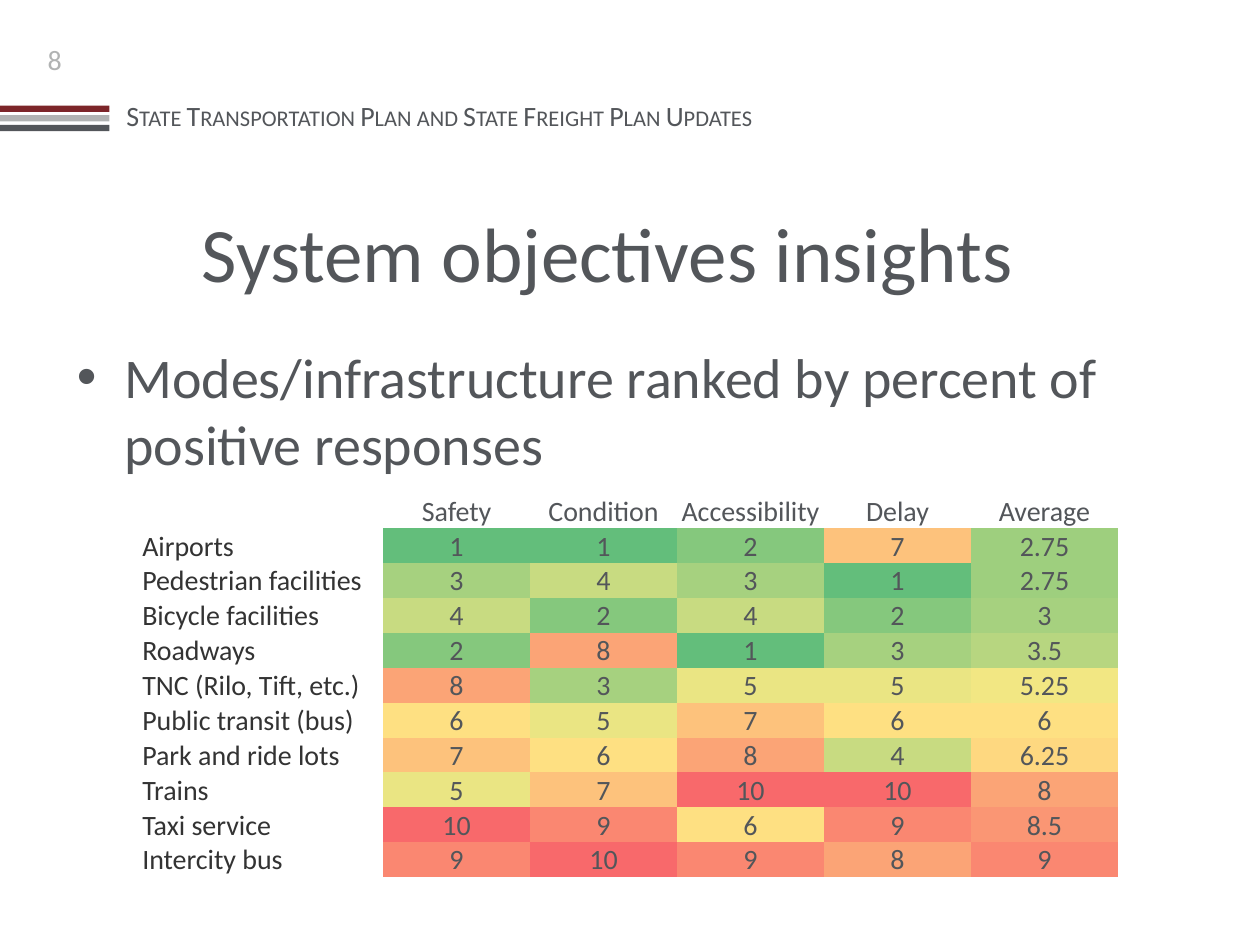
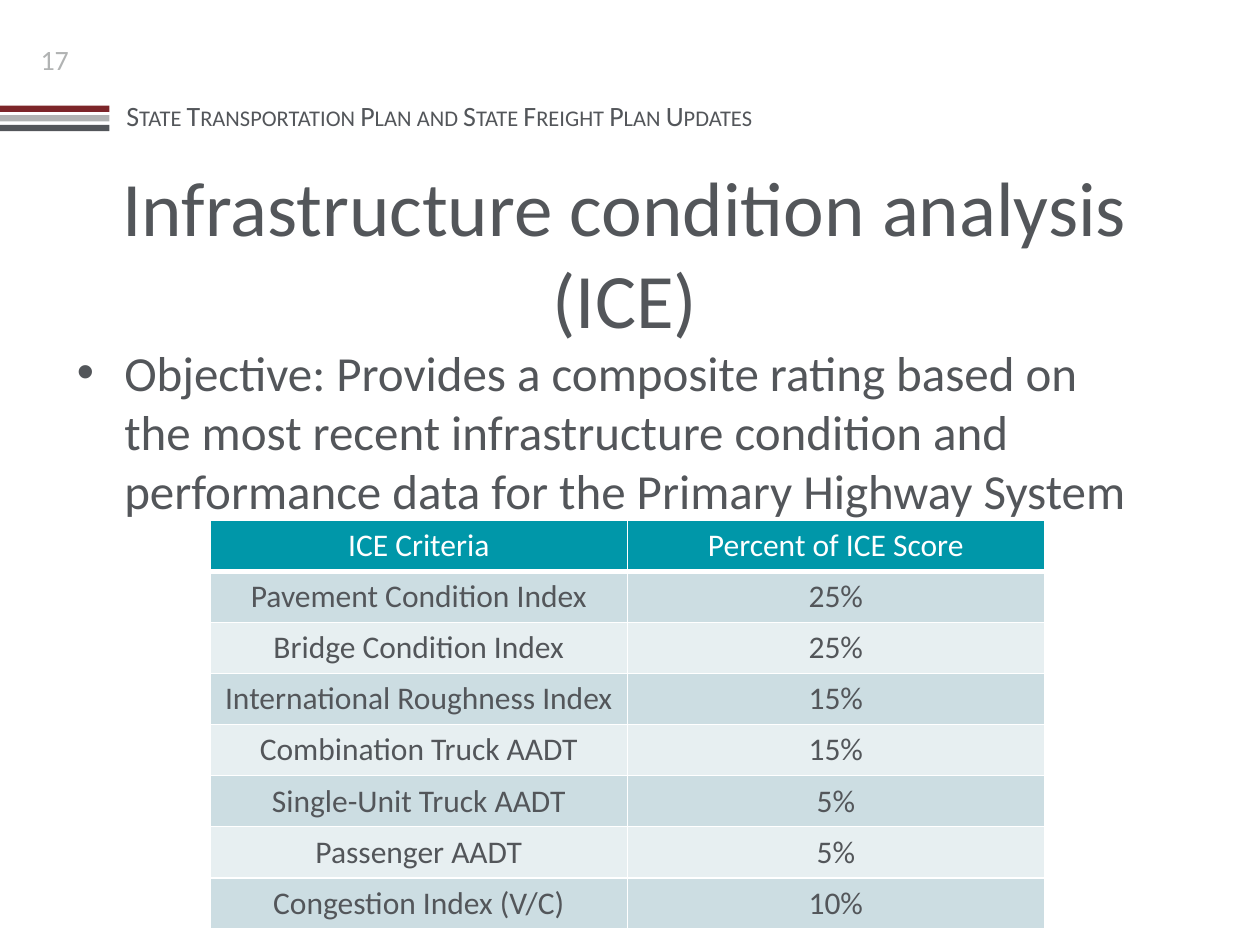
from dataclasses import dataclass

import lxml.etree
import pptx
import pptx.dml.color
import pptx.enum.shapes
import pptx.enum.text
import pptx.oxml.ns
import pptx.util

Pt = pptx.util.Pt
RGBColor = pptx.dml.color.RGBColor
Align = pptx.enum.text.PP_ALIGN
Anchor = pptx.enum.text.MSO_ANCHOR
qn = pptx.oxml.ns.qn

FONT = "Calibri"
SLATE = RGBColor(0x53, 0x56, 0x5A)
SILVER = RGBColor(0xB1, 0xB3, 0xB3)
MAROON = RGBColor(0x7C, 0x25, 0x29)
INK = RGBColor(0x33, 0x33, 0x33)
WHITE = RGBColor(0xFF, 0xFF, 0xFF)
TEAL = RGBColor(0x00, 0x97, 0xA9)
MIST = RGBColor(0xCC, 0xDD, 0xE2)
PALE = RGBColor(0xE7, 0xEF, 0xF1)
GREEN = RGBColor(0x63, 0xBE, 0x7B)
YELLOW = RGBColor(0xFF, 0xEB, 0x84)
RED = RGBColor(0xF8, 0x69, 0x6B)

BEST, MIDDLE, WORST = 1, 5.625, 10
PLAIN_STYLE = "{2D5ABB26-0587-4C30-8999-92F81FD0307C}"
PLAN_NAME = "State Transportation Plan and State Freight Plan Updates"

RANK_HEADS = ["", "Safety", "Condition", "Accessibility", "Delay", "Average"]
RANKS = [
    ("Airports", 1, 1, 2, 7, 2.75),
    ("Pedestrian facilities", 3, 4, 3, 1, 2.75),
    ("Bicycle facilities", 4, 2, 4, 2, 3),
    ("Roadways", 2, 8, 1, 3, 3.5),
    ("TNC (Rilo, Tift, etc.)", 8, 3, 5, 5, 5.25),
    ("Public transit (bus)", 6, 5, 7, 6, 6),
    ("Park and ride lots", 7, 6, 8, 4, 6.25),
    ("Trains", 5, 7, 10, 10, 8),
    ("Taxi service", 10, 9, 6, 9, 8.5),
    ("Intercity bus", 9, 10, 9, 8, 9),
]
SCORES = [
    ("ICE Criteria", "Percent of ICE Score"),
    ("Pavement Condition Index", "25%"),
    ("Bridge Condition Index", "25%"),
    ("International Roughness Index", "15%"),
    ("Combination Truck AADT", "15%"),
    ("Single-Unit Truck AADT", "5%"),
    ("Passenger AADT", "5%"),
    ("Congestion Index (V/C)", "10%"),
]


@dataclass(frozen=True)
class Box:
    left: float
    top: float
    width: float
    height: float

    def points(self) -> list:
        return [Pt(side) for side in (self.left, self.top, self.width, self.height)]


@dataclass(frozen=True)
class Look:
    size: float
    color: RGBColor = SLATE
    align: Align = Align.LEFT


@dataclass(frozen=True)
class Page:
    number: int
    title: str
    title_box: Box
    point: str
    point_box: Box
    point_size: float


@dataclass(frozen=True)
class Grid:
    left: float
    top: float
    widths: list
    row_height: float


PAGES = [
    Page(8, "System objectives insights", Box(36.8, 105.8, 620.8, 76.3),
         "Modes/infrastructure ranked by percent of positive responses",
         Box(36.8, 192.2, 620.6, 332.6), 32),
    Page(17, "Infrastructure condition analysis (ICE)", Box(18, 105.8, 678.2, 76.3),
         "Objective: Provides a composite rating based on the most recent "
         "infrastructure condition and performance data for the Primary Highway System",
         Box(36.8, 192.2, 620.6, 105.1), 28),
]
BAND = Box(0, 60.3, 62.5, 3.6)
BAND_STEP = 5.5
NUMBER_BOX = Box(0, 20.9, 62.5, 26.6)
PLAN_BOX = Box(65.2, 52.6, 378.7, 26.6)
RANK_GRID = Grid(80.7, 282, [138.2] + [84] * 5, 19.95)
SCORE_GRID = Grid(120.2, 297.4, [238.3] * 2, 29.18)


def set_text(frame, text: str, look: Look) -> None:
    frame.text = text
    line = frame.paragraphs[0]
    line.alignment = look.align
    line.space_before = Pt(0)
    line.font.name = FONT
    line.font.size = Pt(look.size)
    line.font.color.rgb = look.color


def add_label(slide, box: Box, text: str, look: Look):
    frame = slide.shapes.add_textbox(*box.points()).text_frame
    frame.word_wrap = True
    set_text(frame, text, look)
    return frame


def add_bands(slide) -> None:
    for index, color in enumerate((MAROON, SILVER, SLATE)):
        box = Box(BAND.left, BAND.top + index * BAND_STEP, BAND.width, BAND.height)
        band = slide.shapes.add_shape(
            pptx.enum.shapes.MSO_SHAPE.RECTANGLE, *box.points())
        band.shadow.inherit = False
        band.fill.solid()
        band.fill.fore_color.rgb = color
        band.line.fill.background()


def fill_holder(holder, box: Box, text: str, look: Look, anchor: Anchor) -> None:
    holder.left, holder.top, holder.width, holder.height = box.points()
    frame = holder.text_frame
    frame.word_wrap = True
    frame.auto_size = pptx.enum.text.MSO_AUTO_SIZE.NONE
    frame.vertical_anchor = anchor
    set_text(frame, text, look)


def add_page(deck, page: Page):
    slide = deck.slides.add_slide(deck.slide_layouts[1])
    fill_holder(slide.shapes.title, page.title_box, page.title,
                Look(44, align=Align.CENTER), Anchor.MIDDLE)
    fill_holder(slide.placeholders[1], page.point_box, page.point,
                Look(page.point_size), Anchor.TOP)
    plan = add_label(slide, PLAN_BOX, PLAN_NAME, Look(16))
    plan.paragraphs[0].runs[0]._r.get_or_add_rPr().set("cap", "small")
    add_bands(slide)
    add_label(slide, NUMBER_BOX, str(page.number), Look(16, SILVER, Align.CENTER))
    return slide


def add_grid(slide, grid: Grid, count: int):
    box = Box(grid.left, grid.top, sum(grid.widths), grid.row_height * count)
    table = slide.shapes.add_table(count, len(grid.widths), *box.points()).table
    table.first_row = table.horz_banding = False
    table._tbl.tblPr.find(qn("a:tableStyleId")).text = PLAIN_STYLE
    for column, width in zip(table.columns, grid.widths):
        column.width = Pt(width)
    for row in table.rows:
        row.height = Pt(grid.row_height)
    return table


def fill_cell(cell, color: RGBColor) -> None:
    cell.fill.solid()
    cell.fill.fore_color.rgb = color


def heat(rank: float) -> RGBColor:
    if rank <= MIDDLE:
        start, end, share = GREEN, YELLOW, (rank - BEST) / (MIDDLE - BEST)
    else:
        start, end, share = YELLOW, RED, (rank - MIDDLE) / (WORST - MIDDLE)
    return RGBColor(*(round(a + (b - a) * share) for a, b in zip(start, end)))


def add_ranks(slide) -> None:
    rows = [RANK_HEADS, *RANKS]
    table = add_grid(slide, RANK_GRID, len(rows))
    for r, row in enumerate(rows):
        for c, value in enumerate(row):
            cell = table.cell(r, c)
            cell.vertical_anchor = Anchor.BOTTOM
            cell.margin_left = cell.margin_right = cell.margin_top = Pt(0.6)
            cell.margin_bottom = Pt(0)
            look = Look(16, align=Align.CENTER) if c else Look(16, INK)
            set_text(cell.text_frame, str(value), look)
            if r and c:
                fill_cell(cell, heat(value))


def add_edges(cell, edges: dict) -> None:
    props = cell._tc.get_or_add_tcPr()
    for index, (side, width) in enumerate(edges.items()):
        edge = lxml.etree.Element(qn(f"a:ln{side}"), w=str(Pt(width)))
        fill = lxml.etree.SubElement(edge, qn("a:solidFill"))
        lxml.etree.SubElement(fill, qn("a:srgbClr"), val=str(WHITE))
        props.insert(index, edge)


def add_scores(slide) -> None:
    table = add_grid(slide, SCORE_GRID, len(SCORES))
    for r, row in enumerate(SCORES):
        for c, text in enumerate(row):
            cell = table.cell(r, c)
            color = SLATE if r else WHITE
            set_text(cell.text_frame, text, Look(18, color, Align.CENTER))
            fill_cell(cell, (PALE, MIST)[r % 2] if r else TEAL)
            add_edges(cell, {"L": 1, "R": 1, "T": 1, "B": 1 if r else 3})


def main() -> None:
    deck = pptx.Presentation()
    deck.slide_width, deck.slide_height = Pt(720), Pt(540)
    for page, add_table in zip(PAGES, (add_ranks, add_scores)):
        add_table(add_page(deck, page))
    deck.save("out.pptx")


if __name__ == "__main__":
    main()
